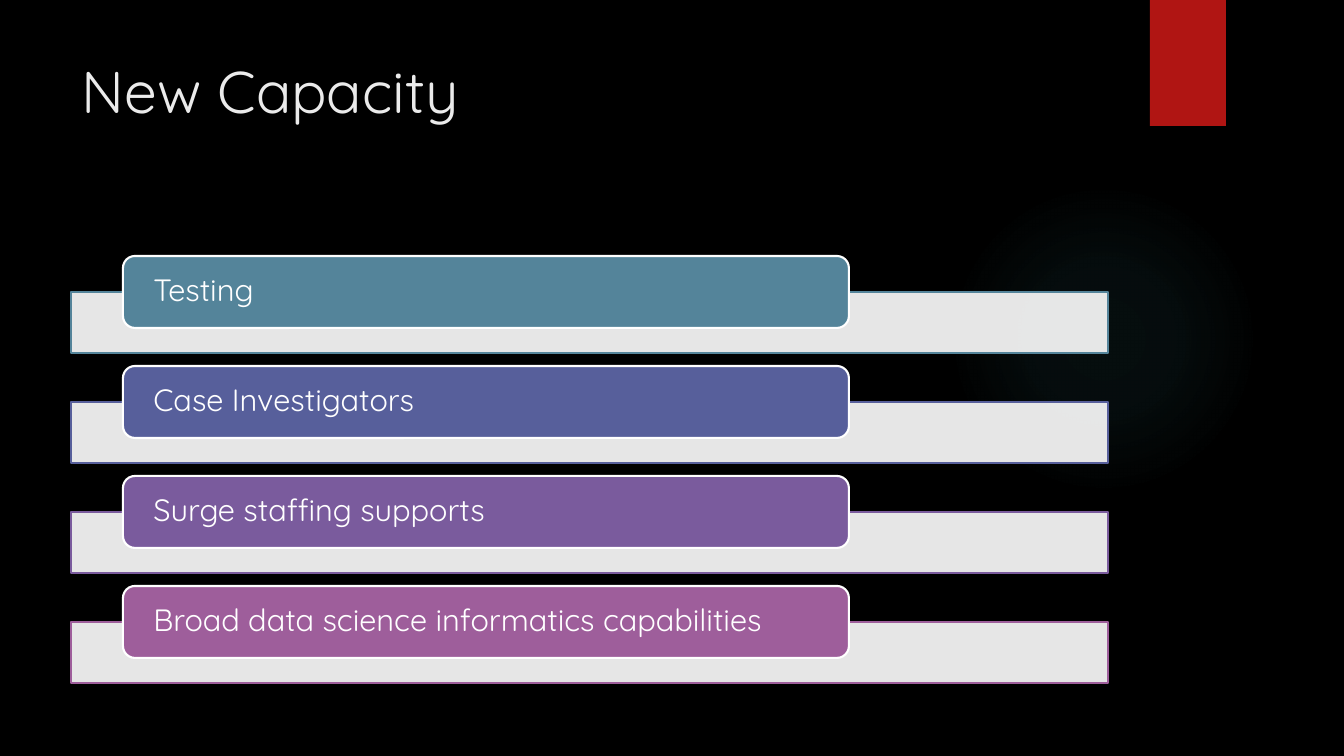
from dataclasses import dataclass

from lxml.etree import SubElement
from pptx import Presentation
from pptx.dml.color import RGBColor
from pptx.enum.shapes import MSO_SHAPE as Preset
from pptx.enum.text import MSO_ANCHOR as Anchor, PP_ALIGN as Align
from pptx.oxml.ns import qn
from pptx.shapes.autoshape import Shape
from pptx.slide import Slide
from pptx.text.text import TextFrame
from pptx.util import Pt

EMU_PER_PX = 914400 / 100.8
FONT = "Quicksand"
FIRST_CARD_TOP = 256
CAPACITY_PITCH = 110
BAR_OFFSET = 36


@dataclass(frozen=True)
class Box:
    """A rectangle in px."""

    left: int
    top: int
    width: int
    height: int


@dataclass(frozen=True)
class Capacity:
    """A labelled card and its accent colour."""

    label: str
    accent: str


CAPACITIES = [
    Capacity("Testing", "54849A"),
    Capacity("Case Investigators", "575F9B"),
    Capacity("Surge staffing supports", "7A5B9D"),
    Capacity("Broad data science informatics capabilities", "9E5E9B"),
]


def px(length: int) -> int:
    """Turn px into EMU."""
    return round(length * EMU_PER_PX)


def colour(value: str) -> RGBColor:
    """Turn a hex string into a colour."""
    return RGBColor.from_string(value)


def place(box: Box) -> tuple[int, int, int, int]:
    """Return the box as EMU lengths."""
    return px(box.left), px(box.top), px(box.width), px(box.height)


def add_block(slide: Slide, preset: Preset, box: Box, fill: str, line: str = "") -> Shape:
    """Add a filled preset shape with an optional outline."""
    shape = slide.shapes.add_shape(preset, *place(box))
    shape.shadow.inherit = False
    shape.fill.solid()
    shape.fill.fore_color.rgb = colour(fill)
    if line:
        shape.line.color.rgb = colour(line)
        shape.line.width = Pt(1.5)
    else:
        shape.line.fill.background()
    return shape


def add_glow(slide: Slide, box: Box, tint: str) -> None:
    """Add a circle that fades out from its centre."""
    shape = add_block(slide, Preset.OVAL, box, tint)
    shape.fill.gradient()
    gradient = shape._element.spPr.find(qn("a:gradFill"))
    for child in list(gradient):
        gradient.remove(child)
    stops = SubElement(gradient, qn("a:gsLst"))
    for position, opacity in ((0, 7), (36, 6), (69, 0)):
        stop = SubElement(stops, qn("a:gs"), pos=str(position * 1000))
        stop_colour = SubElement(stop, qn("a:srgbClr"), val=tint)
        SubElement(stop_colour, qn("a:alpha"), val=str(opacity * 1000))
    circle = SubElement(gradient, qn("a:path"), path="circle")
    SubElement(circle, qn("a:fillToRect"), l="50000", t="50000", r="50000", b="50000")


def write(frame: TextFrame, text: str, size: int, tint: str, spacing: float = 1.0) -> None:
    """Write one left-aligned line of text."""
    frame.word_wrap = True
    paragraph = frame.paragraphs[0]
    paragraph.alignment = Align.LEFT
    paragraph.line_spacing = spacing
    run = paragraph.add_run()
    run.text = text
    run.font.name = FONT
    run.font.size = Pt(size)
    run.font.color.rgb = colour(tint)


def add_title(slide: Slide, text: str) -> None:
    """Add the slide title."""
    title = slide.shapes.add_textbox(*place(Box(72, 50, 1037, 154)))
    write(title.text_frame, text, 42, "EBEBEB")


def add_capacity(slide: Slide, capacity: Capacity, top: int) -> None:
    """Add a pale bar with a labelled card over it."""
    bar_box = Box(71, top + BAR_OFFSET, 1037, 61)
    bar = add_block(slide, Preset.RECTANGLE, bar_box, "FFFFFF", capacity.accent)
    bar_colour = bar._element.spPr.find(qn("a:solidFill")).find(qn("a:srgbClr"))
    SubElement(bar_colour, qn("a:alpha"), val="90000")

    card_box = Box(123, top, 726, 72)
    card = add_block(slide, Preset.ROUNDED_RECTANGLE, card_box, capacity.accent, "FFFFFF")
    frame = card.text_frame
    frame.margin_left = frame.margin_right = px(27)
    frame.margin_top = frame.margin_bottom = 0
    frame.vertical_anchor = Anchor.MIDDLE
    write(frame, capacity.label, 22, "FFFFFF", 0.9)


def main() -> None:
    """Build and save the slide."""
    presentation = Presentation()
    presentation.slide_width = px(1344)
    presentation.slide_height = px(756)
    slide = presentation.slides.add_slide(presentation.slide_layouts[6])
    slide.background.fill.solid()
    slide.background.fill.fore_color.rgb = colour("000000")

    add_glow(slide, Box(949, 184, 310, 310), "50B9C1")
    add_block(slide, Preset.RECTANGLE, Box(1150, 0, 76, 126), "B01513")
    add_title(slide, "New Capacity")
    for index, capacity in enumerate(CAPACITIES):
        add_capacity(slide, capacity, FIRST_CARD_TOP + index * CAPACITY_PITCH)

    presentation.save("out.pptx")


if __name__ == "__main__":
    main()
